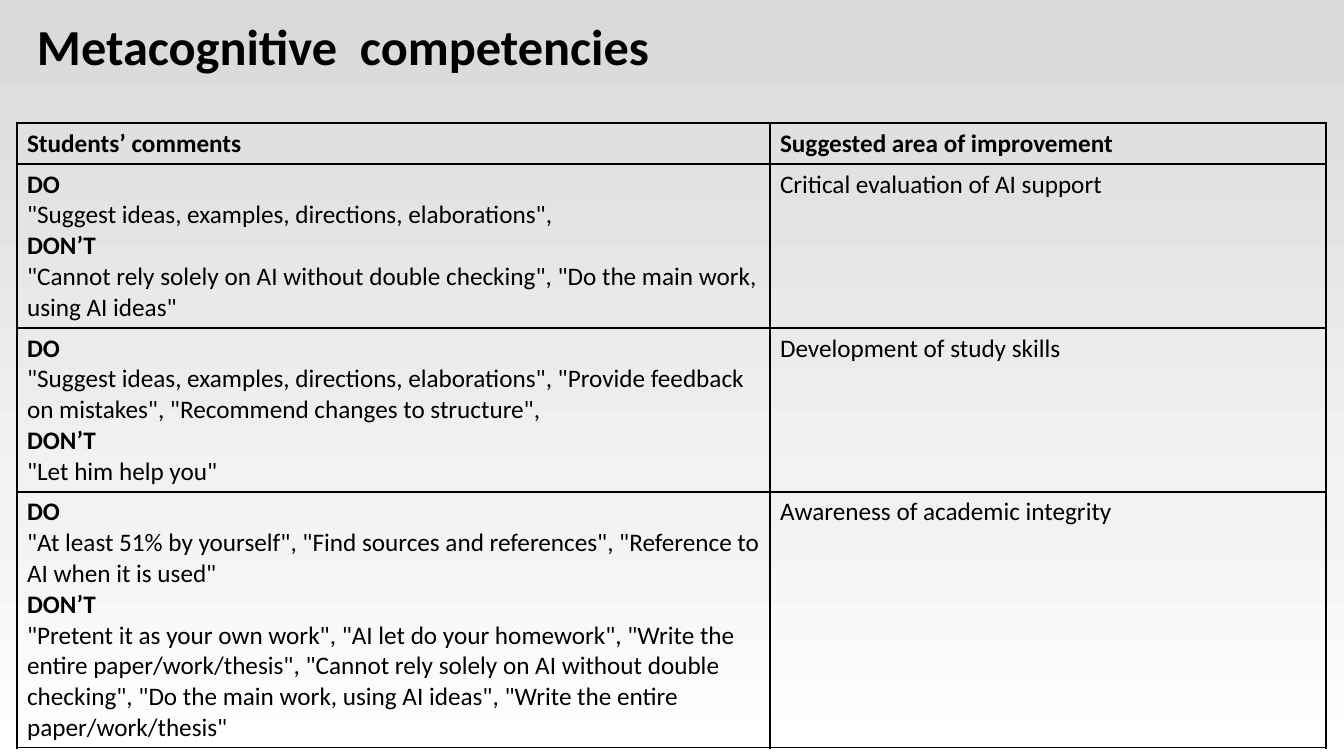
from copy import deepcopy

from pptx import Presentation
from pptx.dml.color import RGBColor
from pptx.enum.text import MSO_ANCHOR
from pptx.oxml import parse_xml
from pptx.oxml.ns import nsdecls, qn
from pptx.util import Pt

SCALE = 914400 / 100.8
BLACK = RGBColor(0x00, 0x00, 0x00)
BACKGROUND_STOPS = [
    (0, RGBColor(0xD9, 0xD9, 0xD9)),
    (0.65, RGBColor(0xF2, 0xF2, 0xF2)),
    (1, RGBColor(0xFF, 0xFF, 0xFF)),
]
COLUMN_WIDTHS = [753, 556]
ROW_HEIGHTS = [41, 164, 164, 256]
HEADINGS = ["Students’ comments", "Suggested area of improvement"]
COMPETENCIES = [
    (
        '"Suggest ideas, examples, directions, elaborations",',
        '"Cannot rely solely on AI without double checking", "Do the main work, using AI ideas"',
        "Critical evaluation of AI support",
    ),
    (
        '"Suggest ideas, examples, directions, elaborations", "Provide feedback on mistakes", '
        '"Recommend changes to structure",',
        '"Let him help you"',
        "Development of study skills",
    ),
    (
        '"At least 51% by yourself", "Find sources and references", '
        '"Reference to AI when it is used"',
        '"Pretent it as your own work", "AI let do your homework", '
        '"Write the entire paper/work/thesis", '
        '"Cannot rely solely on AI without double checking", '
        '"Do the main work, using AI ideas", "Write the entire paper/work/thesis"',
        "Awareness of academic integrity",
    ),
]


def px(value):
    return round(value * SCALE)


def write_lines(text_frame, lines, size):
    """Write one paragraph for each (text, bold) pair."""
    for index, (text, bold) in enumerate(lines):
        paragraph = text_frame.paragraphs[0] if index == 0 else text_frame.add_paragraph()
        run = paragraph.add_run()
        run.text = text
        font_format = {"name": "Calibri", "size": Pt(size), "bold": bold}
        for name, value in font_format.items():
            setattr(run.font, name, value)
        run.font.color.rgb = BLACK


presentation = Presentation()
presentation.slide_width = px(1344)
presentation.slide_height = px(756)
slide = presentation.slides.add_slide(presentation.slide_layouts[6])

# Background gradient, from grey at the top to white
background_fill = slide.background.fill
background_fill.gradient()
background_fill.gradient_angle = 270
stop_list = slide.element.find(".//" + qn("a:gsLst"))
stop_list.append(deepcopy(stop_list[-1]))
for stop, (position, color) in zip(background_fill.gradient_stops, BACKGROUND_STOPS):
    stop.position = position
    stop.color.rgb = color

# Title
title = slide.shapes.add_textbox(px(17), 0, px(1309), px(99)).text_frame
title_format = {"word_wrap": True, "vertical_anchor": MSO_ANCHOR.MIDDLE}
for side in ("left", "top", "right", "bottom"):
    title_format[f"margin_{side}"] = px(20)
for name, value in title_format.items():
    setattr(title, name, value)
write_lines(title, [("Metacognitive  competencies", True)], 36)
title.paragraphs[0].line_spacing = 0.9

# Table
rows = [[[(heading, True)] for heading in HEADINGS]]
for do_comment, dont_comment, improvement in COMPETENCIES:
    comments = [("DO", True), (do_comment, False), ("DON’T", True), (dont_comment, False)]
    rows.append([comments, [(improvement, False)]])

table = slide.shapes.add_table(
    len(rows), len(COLUMN_WIDTHS), px(17), px(123), px(sum(COLUMN_WIDTHS)), px(sum(ROW_HEIGHTS))
).table
table.first_row = False
table.horz_banding = False
for column, width in zip(table.columns, COLUMN_WIDTHS):
    column.width = px(width)
for row, height, contents in zip(table.rows, ROW_HEIGHTS, rows):
    row.height = px(height)
    for cell, lines in zip(row.cells, contents):
        write_lines(cell.text_frame, lines, 18)
        cell.fill.background()
        cell_properties = cell._tc.get_or_add_tcPr()
        for index, edge in enumerate(("lnL", "lnR", "lnT", "lnB")):
            border = parse_xml(
                f'<a:{edge} {nsdecls("a")} w="{Pt(1)}"><a:solidFill>'
                f'<a:srgbClr val="{BLACK}"/></a:solidFill></a:{edge}>'
            )
            cell_properties.insert(index, border)

presentation.save("out.pptx")
